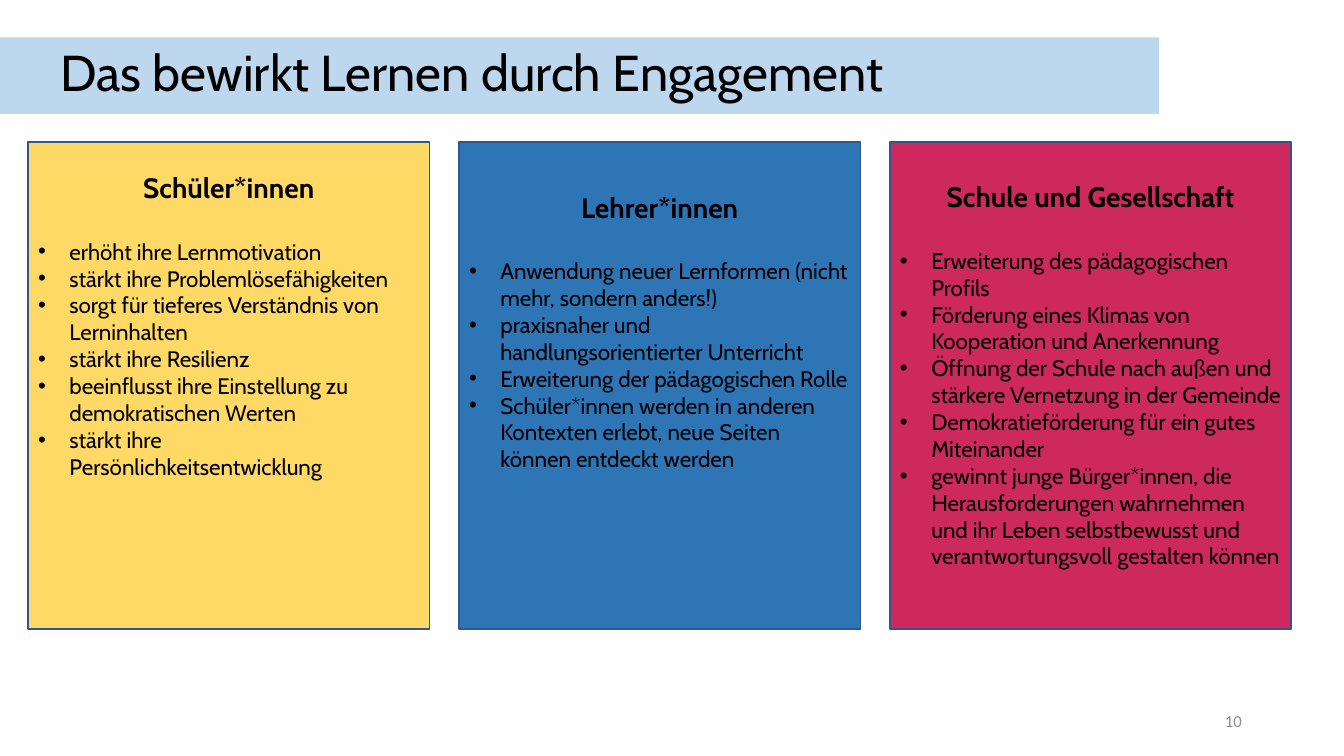
from lxml import etree
from pptx import Presentation
from pptx.dml.color import RGBColor as RGB
from pptx.enum.text import MSO_ANCHOR as ANCHOR, MSO_AUTO_SIZE as AUTO, PP_ALIGN as ALIGN
from pptx.oxml.ns import qn
from pptx.util import Cm, Pt

COLORS = {"title": "BDD7EE", "students": "FFD966", "teachers": "2E75B6",
          "school": "CE295E", "border": "325491", "text": "000000", "number": "8C8C8C"}

# Colour, top inset in cm, heading, points
CARDS = [
    ("students", 0.72, "Schüler*innen", [
        "erhöht ihre Lernmotivation",
        "stärkt ihre Problemlösefähigkeiten",
        "sorgt für tieferes Verständnis von Lerninhalten",
        "stärkt ihre Resilienz",
        "beeinflusst ihre Einstellung zu demokratischen Werten",
        "stärkt ihre Persönlichkeitsentwicklung"]),
    ("teachers", 1.21, "Lehrer*innen", [
        "Anwendung neuer Lernformen (nicht mehr, sondern anders!)",
        "praxisnaher und handlungsorientierter Unterricht",
        "Erweiterung der pädagogischen Rolle",
        "Schüler*innen werden in anderen Kontexten erlebt, neue Seiten können entdeckt werden"]),
    ("school", 0.95, "Schule und Gesellschaft", [
        "Erweiterung des pädagogischen Profils",
        "Förderung eines Klimas von Kooperation und Anerkennung",
        "Öffnung der Schule nach außen und stärkere Vernetzung in der Gemeinde",
        "Demokratieförderung für ein gutes Miteinander",
        "gewinnt junge Bürger*innen, die Herausforderungen wahrnehmen und ihr Leben "
        "selbstbewusst und verantwortungsvoll gestalten können"]),
]


def place(sp, left, top, width, height, anchor):
    sp.left, sp.top, sp.width, sp.height = Cm(left), Cm(top), Cm(width), Cm(height)
    tf = sp.text_frame
    tf.word_wrap, tf.auto_size, tf.vertical_anchor = True, AUTO.NONE, anchor
    tf.margin_left = tf.margin_right = Cm(0.25)
    tf.margin_top = tf.margin_bottom = Cm(0.13)
    return tf


def write(p, text, size, align=ALIGN.LEFT, bold=False, color="text", font="Cabin"):
    p.text = text
    p.alignment = align
    p.space_before = Pt(0)
    for r in p.runs:
        r.font.name, r.font.size, r.font.bold = font, Pt(size), bold
        r.font.color.rgb = RGB.from_string(COLORS[color])


prs = Presentation()
prs.slide_width, prs.slide_height = Cm(33.87), Cm(19.05)
s = prs.slides.add_slide(prs.slide_layouts.get_by_name("Comparison"))

# Title band
title = s.shapes.title
tf = place(title, 0, 0.94, 29.21, 1.93, ANCHOR.MIDDLE)
tf.margin_left = Cm(1.52)
title.fill.solid()
title.fill.fore_color.rgb = RGB.from_string(COLORS["title"])
write(tf.paragraphs[0], "Das bewirkt Lernen durch Engagement", 36)
tf.paragraphs[0].line_spacing = 0.9

# Three cards in the body placeholders
bodies = list(s.placeholders)[1:]
for i, (sp, (color, inset, heading, points)) in enumerate(zip(bodies, CARDS)):
    tf = place(sp, 0.71 + i * 10.86, 3.58, 10.11, 12.27, ANCHOR.TOP)
    tf.margin_top = Cm(inset)
    sp.fill.solid()
    sp.fill.fore_color.rgb = RGB.from_string(COLORS[color])
    sp.line.color.rgb = RGB.from_string(COLORS["border"])
    sp.line.width = Pt(1)

    p = tf.paragraphs[0]
    pPr = p._p.get_or_add_pPr()
    pPr.set("marL", "0")
    pPr.set("indent", "0")
    etree.SubElement(pPr, qn("a:buNone"))
    write(p, heading, 20, ALIGN.CENTER, bold=True)
    p.space_after = Pt(24)

    for point in points:
        p = tf.add_paragraph()
        pPr = p._p.get_or_add_pPr()
        pPr.set("marL", str(Cm(0.79)))
        pPr.set("indent", str(-Cm(0.79)))
        etree.SubElement(pPr, qn("a:buFont"), typeface="Arial")
        etree.SubElement(pPr, qn("a:buChar"), char="•")
        write(p, point, 16)

# Drop the unused placeholder
spare = bodies[-1]._element
spare.getparent().remove(spare)

# Slide number
sp = s.shapes.add_textbox(0, 0, Cm(1), Cm(1))
tf = place(sp, 23.93, 17.65, 7.62, 1.02, ANCHOR.MIDDLE)
write(tf.paragraphs[0], "10", 12, ALIGN.RIGHT, color="number", font="Calibri")

prs.save("out.pptx")
